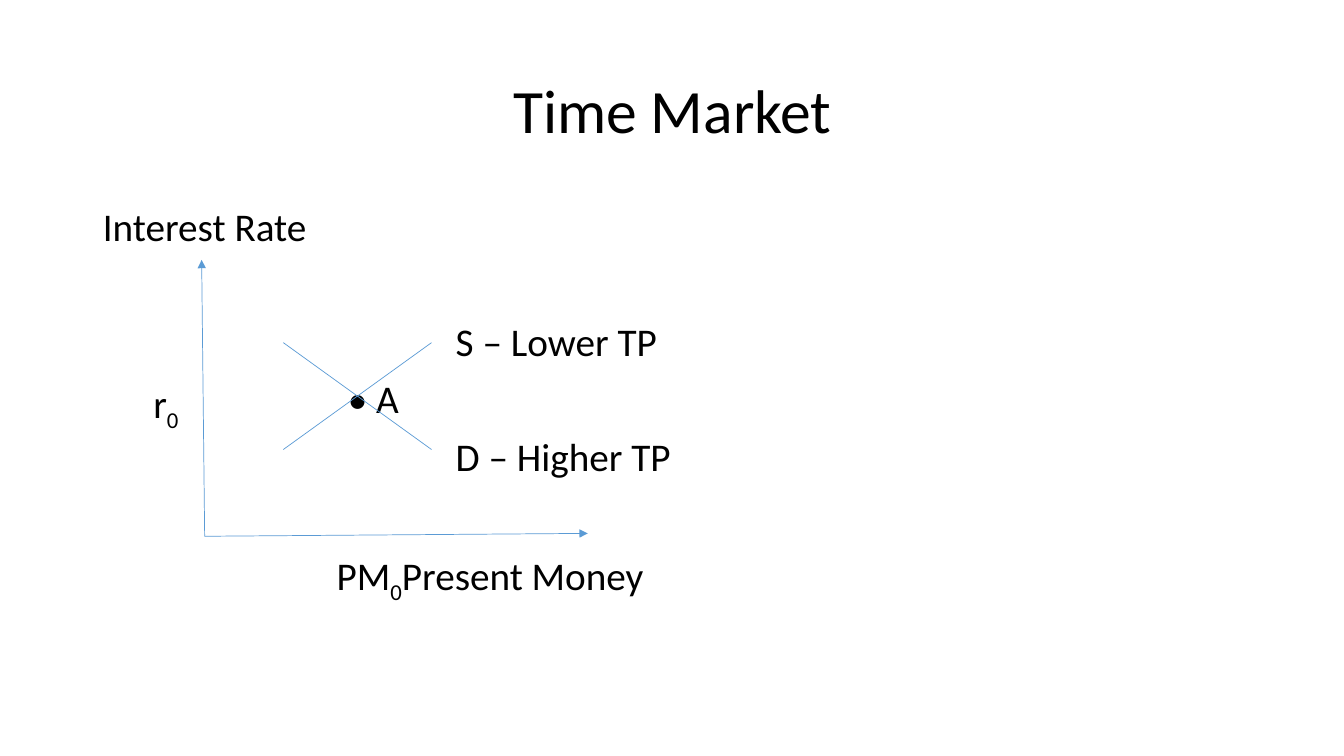
from lxml import etree
from pptx import Presentation
from pptx.dml.color import RGBColor
from pptx.enum.shapes import MSO_CONNECTOR as Connector
from pptx.enum.text import MSO_ANCHOR as Anchor, PP_ALIGN as Align
from pptx.oxml.ns import qn
from pptx.util import Inches, Pt


def rgb(hex_code):
    return RGBColor.from_string(hex_code)


class Diagram:
    """Style and slide; the grid has one-inch columns and one row per text line."""
    FONT, INK, LINE = "Calibri", "000000", "5B9BD5"
    TOP, ROW = 2.06, 0.57

    def __init__(self, slide):
        self.shapes = slide.shapes

    def x(self, col):
        return Inches(col)

    def y(self, row):
        return Inches(self.TOP + row * self.ROW)

    def text(self, parts, col, row, cols, rows=1, size=28,
             align=Align.LEFT, anchor=Anchor.TOP):
        """Write parts in one line; every second part is a subscript."""
        box = self.shapes.add_textbox(self.x(col), self.y(row), self.x(cols),
                                      Inches(rows * self.ROW))
        frame = box.text_frame
        frame.word_wrap = True
        frame.vertical_anchor = anchor
        frame.margin_left = frame.margin_right = 0
        frame.margin_top = frame.margin_bottom = 0
        line = frame.paragraphs[0]
        line.alignment, line.line_spacing = align, 0.9
        line.font.name, line.font.size = self.FONT, Pt(size)
        line.font.color.rgb = rgb(self.INK)
        for index, part in enumerate(parts):
            run = line.add_run()
            run.text = part
            if index % 2:
                run._r.get_or_add_rPr().set("baseline", "-25000")

    def line(self, start, end, arrow=False):
        """Draw a line between two (column, row) points."""
        link = self.shapes.add_connector(
            Connector.STRAIGHT, self.x(start[0]), self.y(start[1]),
            self.x(end[0]), self.y(end[1]))
        link.line.color.rgb = rgb(self.LINE)
        link.line.width = Pt(0.5)
        if arrow:
            etree.SubElement(link.line._get_or_add_ln(), qn("a:tailEnd"),
                             type="triangle")
        etree.SubElement(link._element.spPr, qn("a:effectLst"))


def main():
    deck = Presentation()
    deck.slide_width, deck.slide_height = Inches(13.33), Inches(7.5)
    market = Diagram(deck.slides.add_slide(deck.slide_layouts[6]))

    market.text(["Time Market"], 0.92, -2.91, 11.5, 2.54, size=44,
                align=Align.CENTER, anchor=Anchor.MIDDLE)

    labels = [
        (["Interest Rate"], 1.02, 0, 3),
        (["S – Lower TP"], 4.52, 2, 3),
        (["r", "0"], 1.52, 3, 0.45),
        (["• A"], 3.45, 3, 0.8),
        (["D – Higher TP"], 4.52, 4, 3),
        (["PM", "0", "Present Money"], 3.34, 6, 4),
    ]
    for parts, col, row, cols in labels:
        market.text(parts, col, row, cols)

    origin = (2.03, 5.72)
    for axis_end in [(2, 0.91), (5.83, 5.67)]:
        market.line(origin, axis_end, arrow=True)

    left, right, high, low = 2.81, 4.28, 2.35, 4.21
    market.line((left, high), (right, low))  # demand
    market.line((left, low), (right, high))  # supply

    deck.save("out.pptx")


if __name__ == "__main__":
    main()
